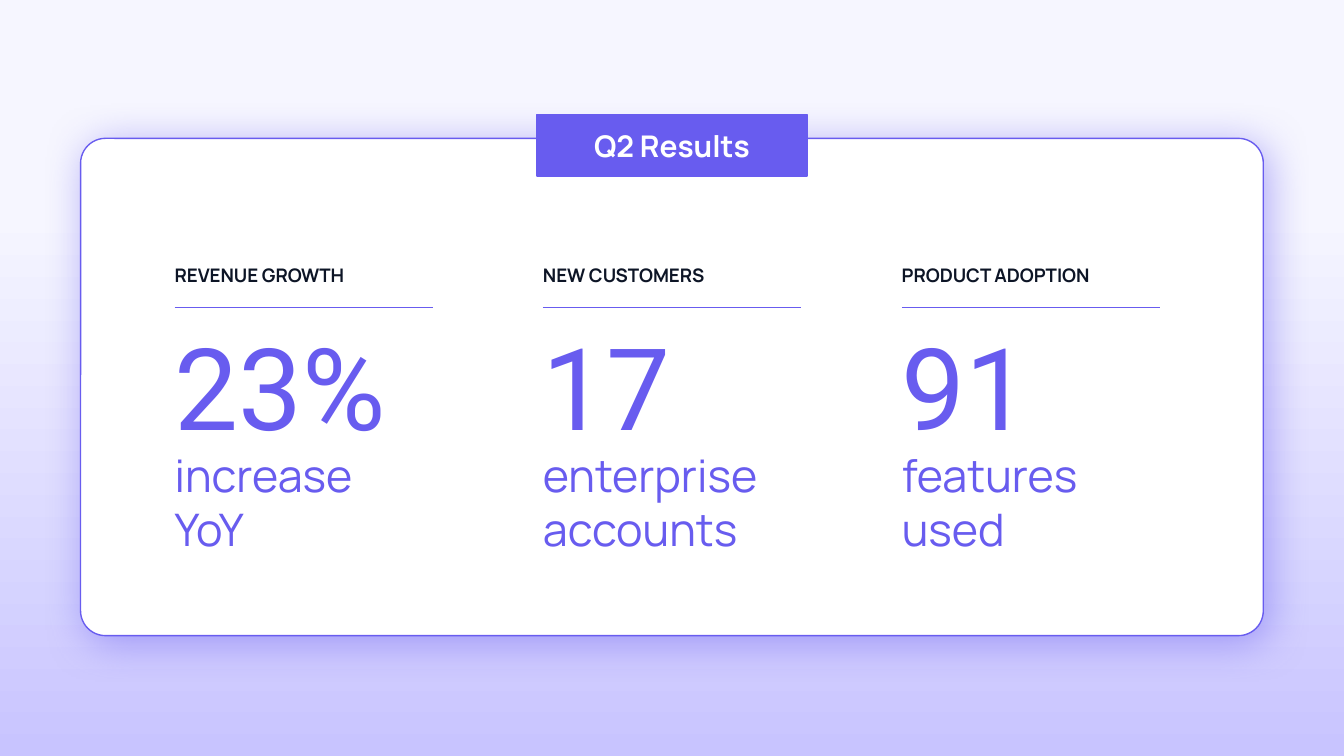
from lxml.etree import SubElement
from pptx import Presentation
from pptx.dml.color import RGBColor
from pptx.enum.shapes import MSO_CONNECTOR, MSO_SHAPE
from pptx.enum.text import MSO_ANCHOR, MSO_AUTO_SIZE, PP_ALIGN
from pptx.oxml.ns import qn
from pptx.util import Inches, Pt

VIOLET = RGBColor(0x68, 0x5C, 0xEF)
LILAC = RGBColor(0xC8, 0xC4, 0xFF)
MIST = RGBColor(0xF6, 0xF6, 0xFF)
INK = RGBColor(0x0D, 0x15, 0x26)
WHITE = RGBColor(0xFF, 0xFF, 0xFF)

STATS = [
    (0.7, "REVENUE GROWTH", "23%", "increase YoY", 1.76),
    (3.44, "NEW CUSTOMERS", "17", "enterprise accounts", 1.91),
    (6.11, "PRODUCT ADOPTION", "91", "features \vused", 1.91),
]


def trace(line):
    """Make a line thin and violet."""
    line.color.rgb = VIOLET
    line.width = Pt(0.75)


def paint(shape, fill):
    """Fill a shape and give it the thin violet outline."""
    shape.fill.solid()
    shape.fill.fore_color.rgb = fill
    trace(shape.line)


def style(para, size, color, face="Manrope", bold=False):
    """Set the font of a whole paragraph."""
    font = para.font
    font.name, font.size, font.bold = face, Pt(size), bold
    font.color.rgb = color


def write(slide, box, text, size, color, face="Manrope", bold=False,
          anchor=MSO_ANCHOR.TOP):
    """Add a text box without margins."""
    frame = slide.shapes.add_textbox(*map(Inches, box)).text_frame
    frame.word_wrap = True
    frame.vertical_anchor = anchor
    frame.margin_left = frame.margin_right = 0
    frame.margin_top = frame.margin_bottom = 0
    para = frame.paragraphs[0]
    para.text = text
    style(para, size, color, face, bold)


def add_back(slide):
    """Fade the background from mist down to lilac."""
    fill = slide.background.fill
    fill.gradient()
    fill.gradient_angle = 270
    for stop, place, color in zip(fill.gradient_stops, (0.28, 1), (MIST, LILAC)):
        stop.position = place
        stop.color.rgb = color


def add_card(slide, left, top, width, height):
    """Add the rounded white card with its violet glow."""
    card = slide.shapes.add_shape(
        MSO_SHAPE.ROUNDED_RECTANGLE, *map(Inches, (left, top, width, height)))
    card.adjustments[0] = 0.05
    paint(card, WHITE)
    card.shadow.inherit = False
    effects = card.element.spPr.find(qn("a:effectLst"))
    glow = SubElement(effects, qn("a:outerShdw"), blurRad=str(Pt(22.5)),
                      dist=str(Pt(4.5)), dir=str(45 * 60000),
                      algn="bl", rotWithShape="0")
    tint = SubElement(glow, qn("a:srgbClr"), val=str(VIOLET))
    SubElement(tint, qn("a:alpha"), val="50000")
    slide.shapes.title.element.addprevious(card.element)


def add_title(slide, left, top, width, height):
    """Turn the title placeholder into the violet tab."""
    title = slide.shapes.title
    title.left, title.top = Inches(left), Inches(top)
    title.width, title.height = Inches(width), Inches(height)
    paint(title, VIOLET)
    frame = title.text_frame
    frame.auto_size = MSO_AUTO_SIZE.NONE
    frame.vertical_anchor = MSO_ANCHOR.MIDDLE
    frame.margin_left = frame.margin_right = Inches(0.1)
    frame.margin_top = frame.margin_bottom = Inches(0.1)
    para = frame.paragraphs[0]
    para.text = "Q2 Results"
    para.alignment = PP_ALIGN.CENTER
    style(para, 16, WHITE, bold=True)


def add_rule(slide, left, top, width):
    """Add a level violet line without theme effects."""
    y = Inches(top)
    rule = slide.shapes.add_connector(
        MSO_CONNECTOR.STRAIGHT, Inches(left), y, Inches(left + width), y)
    trace(rule.line)
    SubElement(rule.element.spPr, qn("a:effectLst"))
    rule.element.remove(rule.element.find(qn("p:style")))


def add_stat(slide, left, top, label, value, note, width):
    """Add one column: label, rule, big figure and note."""
    write(slide, (left, top, 2, 0.5), label, 10, INK, bold=True,
          anchor=MSO_ANCHOR.MIDDLE)
    add_rule(slide, left, top + 0.49, 1.92)
    write(slide, (left, top + 0.56, 2.06, 1.03), value, 61, VIOLET, "Roboto")
    write(slide, (left, top + 1.53, width, 0.97), note, 24, VIOLET)


def add_results(slide, left, top, width, height):
    """Place the card, its title tab and the three columns."""
    add_card(slide, left, top, width, height)
    add_title(slide, left + (width - 2.01) / 2, top - 0.18, 2.01, 0.46)
    for shift, *stat in STATS:
        add_stat(slide, left + shift, top + 0.77, *stat)


def main():
    """Build and save the deck."""
    deck = Presentation()
    deck.slide_width = Inches(10)
    deck.slide_height = Inches(10 * 9 / 16)
    slide = deck.slides.add_slide(deck.slide_layouts[5])
    add_back(slide)
    add_results(slide, 0.6, 1.03, 8.8, 3.7)
    deck.save("out.pptx")


if __name__ == "__main__":
    main()
